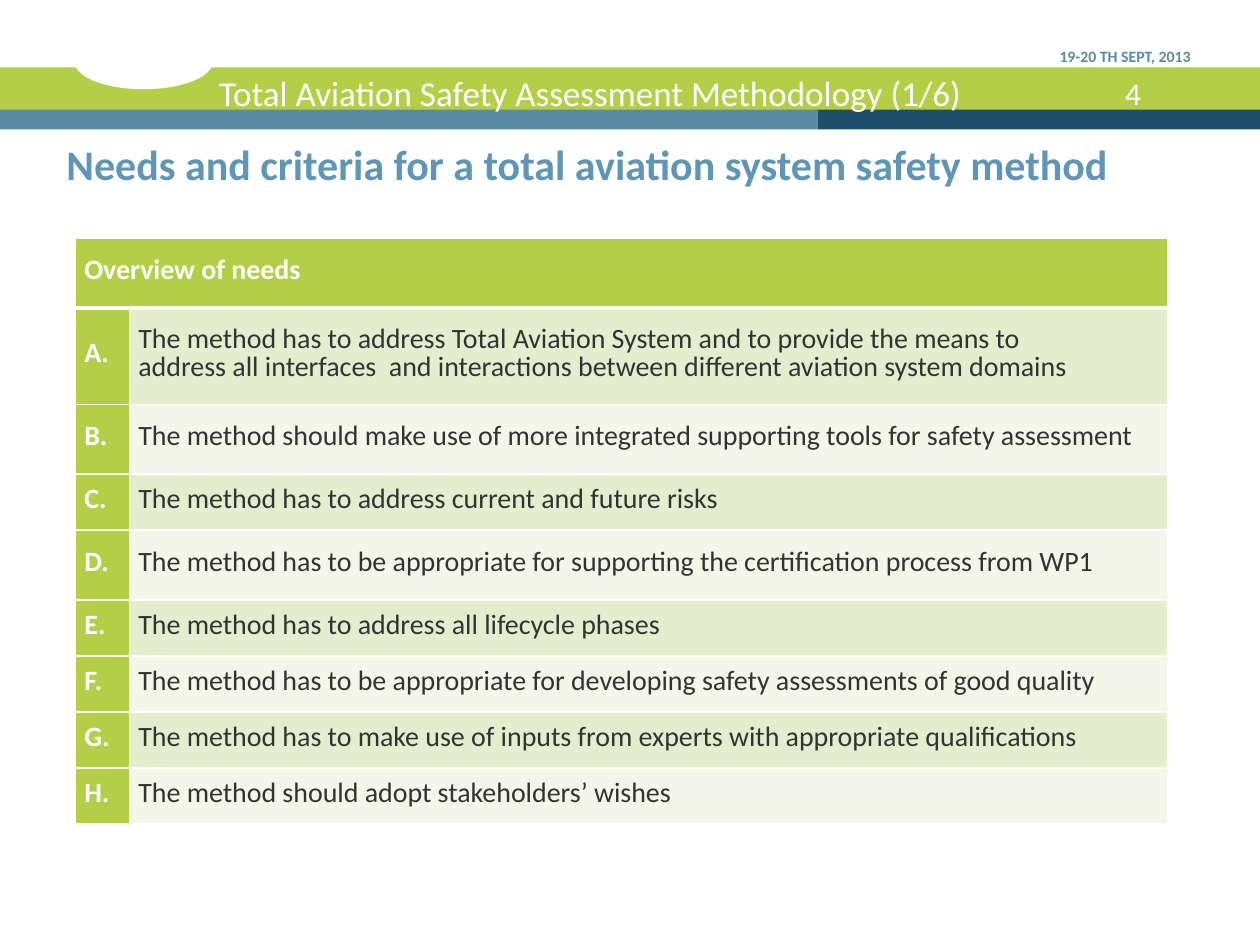
import pptx
import pptx.util
import pptx.dml.color
import pptx.enum.shapes
import pptx.enum.text
import pptx.oxml
import pptx.oxml.ns

Cm, Pt = pptx.util.Cm, pptx.util.Pt
SHAPE = pptx.enum.shapes.MSO_SHAPE
ANCHOR = pptx.enum.text.MSO_ANCHOR

# Content
COLOURS = {
    "white": "FFFFFF", "green": "B5CE48", "navy": "1E4E6B", "steel": "5B8AA5",
    "heading": "5F96B5", "text": "333333", "odd": "E5EDCF", "even": "F3F6E9",
}
TABLE_HEADER = "Overview of needs"
NEEDS = [  # wording, row height in cm
    ("The method has to address Total Aviation System and to provide the means to\n"
     "address all interfaces  and interactions between different aviation system domains", 1.94),
    ("The method should make use of more integrated supporting tools for safety assessment", 1.41),
    ("The method has to address current and future risks", 1.13),
    ("The method has to be appropriate for supporting the certification process from WP1", 1.41),
    ("The method has to address all lifecycle phases", 1.13),
    ("The method has to be appropriate for developing safety assessments of good quality", 1.13),
    ("The method has to make use of inputs from experts with appropriate qualifications", 1.13),
    ("The method should adopt stakeholders’ wishes", 1.13),
]
HEADER_HEIGHT = 1.41
COLUMN_WIDTHS = (1.09, 20.93)

# Geometry in cm: left, top, width, height
BAND_SHAPES = [
    (SHAPE.RECTANGLE, "green", (0, 1.36, 25.4, 0.86)),
    (SHAPE.RECTANGLE, "navy", (16.48, 2.21, 8.92, 0.4)),
    (SHAPE.RECTANGLE, "steel", (0, 2.21, 16.48, 0.4)),
    (SHAPE.OVAL, "white", (1.5, 0.69, 2.79, 1.11)),
]
TEXTS = [  # wording, box, size, colour, bold, anchor, right inset
    ("4", (22.43, 1.37, 2.11, 1.02), 18, "white", False, ANCHOR.TOP, 0.25),
    ("Total Aviation Safety Assessment Methodology (1/6)",
     (4.17, 0.79, 17.45, 1.63), 20, "white", False, ANCHOR.BOTTOM, 0.25),
    ("Needs and criteria for a total aviation system safety method",
     (1.09, 2.67, 23.62, 1.27), 24, "heading", True, ANCHOR.TOP, 0.25),
    ("19-20 TH SEPT, 2013", (21.11, 0.18, 3.02, 1.27), 9, "steel", True, ANCHOR.BOTTOM, 0),
]


def rgb(name):
    return pptx.dml.color.RGBColor.from_string(COLOURS[name])


def style_text(tf, size, colour, bold):
    for p in tf.paragraphs:
        for r in p.runs:
            r.font.name = "Calibri"
            r.font.size = Pt(size)
            r.font.bold = bold
            r.font.color.rgb = rgb(colour)


def fill_cell(cell, text, fill, colour, bold, bottom=1):
    cell.text_frame.text = text
    style_text(cell.text_frame, 16, colour, bold)
    for p in cell.text_frame.paragraphs:
        p.line_spacing = Pt(16)
    cell.vertical_anchor = ANCHOR.MIDDLE
    cell.margin_left = cell.margin_right = Cm(0.18)
    cell.margin_top = cell.margin_bottom = 0
    # Borders come before the fill in the cell properties
    tcPr = cell._tc.get_or_add_tcPr()
    for side, width in (("L", 1), ("R", 1), ("T", 1), ("B", bottom)):
        tcPr.append(pptx.oxml.parse_xml(
            f'<a:ln{side} {pptx.oxml.ns.nsdecls("a")} w="{Pt(width)}"><a:solidFill>'
            f'<a:srgbClr val="{COLOURS["white"]}"/></a:solidFill></a:ln{side}>'))
    cell.fill.solid()
    cell.fill.fore_color.rgb = rgb(fill)


prs = pptx.Presentation()
prs.slide_width, prs.slide_height = Cm(25.4), Cm(19.05)
s = prs.slides.add_slide(prs.slide_layouts[6])

# Header band
for kind, colour, box in BAND_SHAPES:
    sp = s.shapes.add_shape(kind, *map(Cm, box))
    sp.shadow.inherit = False
    sp.fill.solid()
    sp.fill.fore_color.rgb = rgb(colour)
    sp.line.fill.background()

# Titles, date and page number
for text, box, size, colour, bold, anchor, right in TEXTS:
    tf = s.shapes.add_textbox(*map(Cm, box)).text_frame
    tf.word_wrap = True
    tf.vertical_anchor = anchor
    tf.margin_right = Cm(right)
    tf.text = text
    style_text(tf, size, colour, bold)

# Table of needs
heights = [HEADER_HEIGHT] + [height for _, height in NEEDS]
table = s.shapes.add_table(len(heights), 2, Cm(1.52), Cm(4.8),
                           Cm(sum(COLUMN_WIDTHS)), Cm(sum(heights))).table
for column, width in zip(table.columns, COLUMN_WIDTHS):
    column.width = Cm(width)
for row, height in zip(table.rows, heights):
    row.height = Cm(height)

table.cell(0, 0).merge(table.cell(0, 1))
fill_cell(table.cell(0, 0), TABLE_HEADER, "green", "white", True, bottom=3)
for i, (need, _) in enumerate(NEEDS, start=1):
    letter = "ABCDEFGH"[i - 1]
    fill_cell(table.cell(i, 0), f"{letter}.", "green", "white", True)
    fill_cell(table.cell(i, 1), need, "odd" if i % 2 else "even", "text", False)

prs.save("out.pptx")
